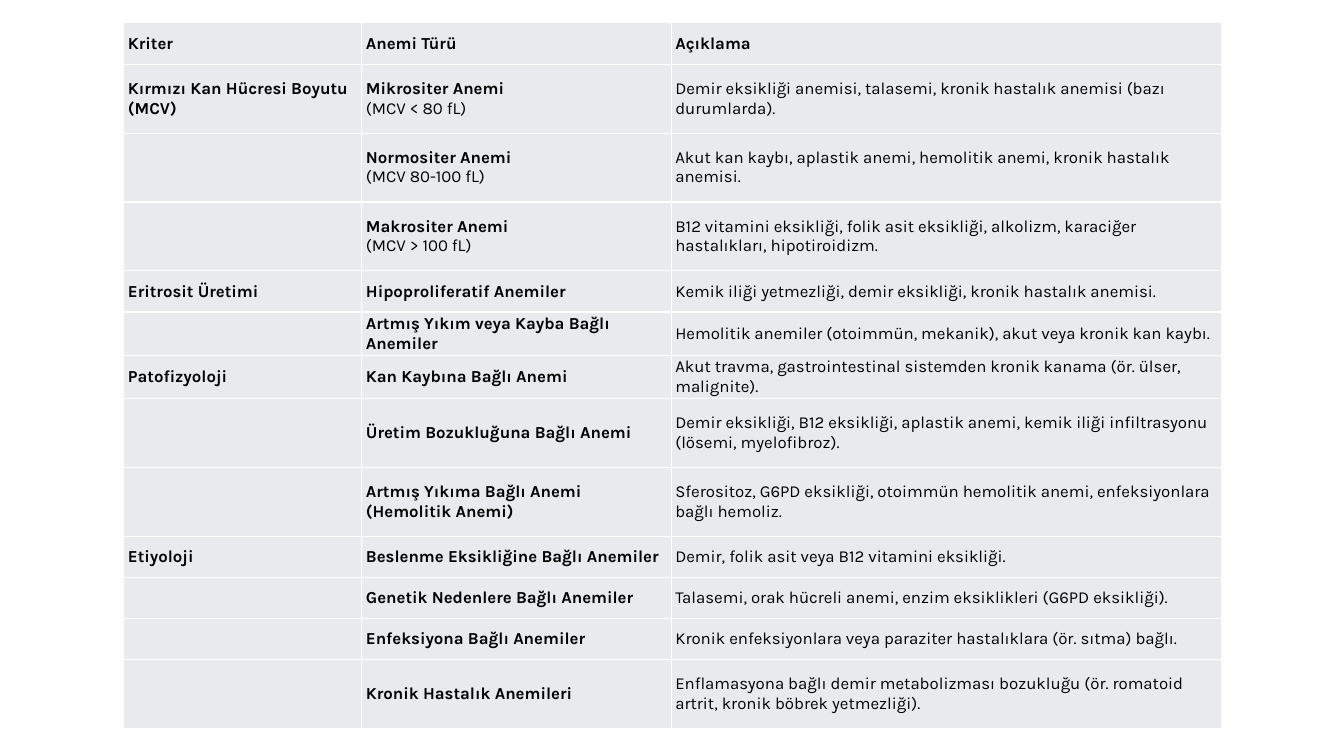
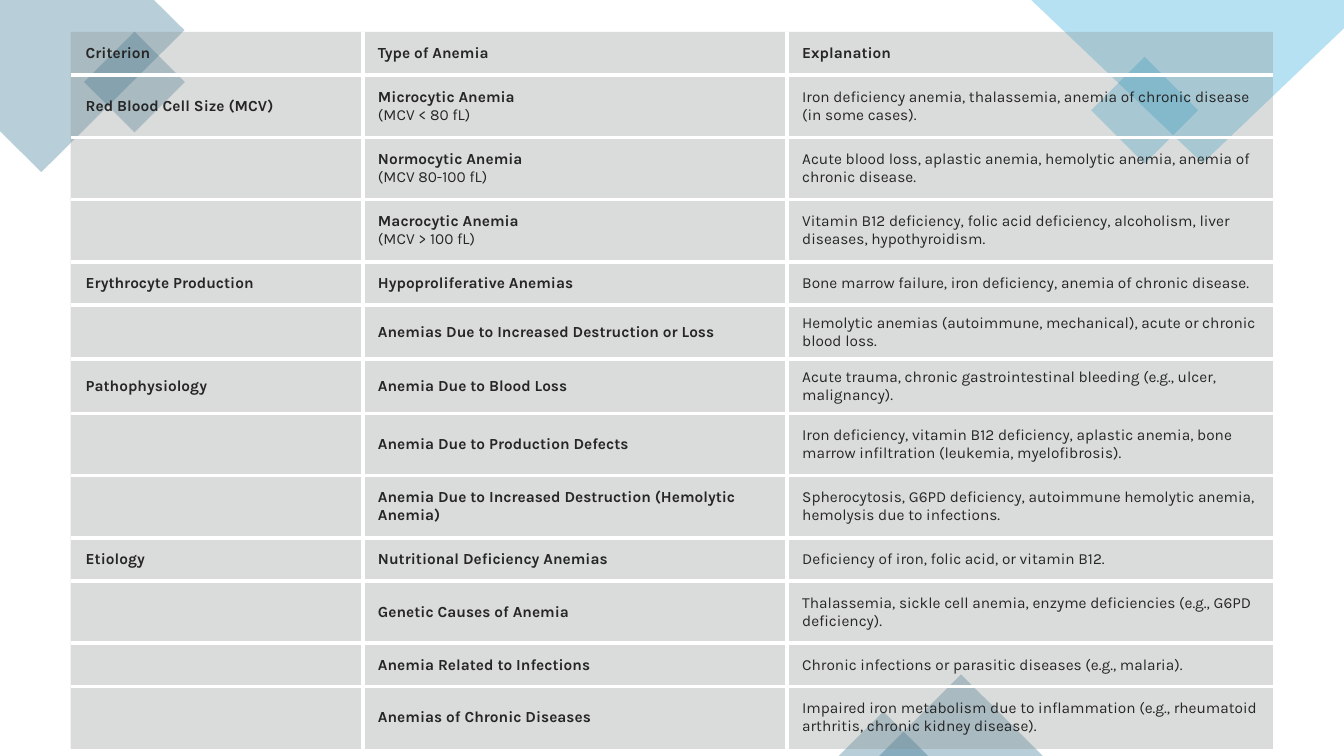
from dataclasses import dataclass

from lxml.etree import SubElement
from pptx import Presentation
from pptx.dml.color import RGBColor
from pptx.enum.shapes import MSO_SHAPE
from pptx.enum.text import MSO_ANCHOR
from pptx.oxml import parse_xml
from pptx.oxml.ns import nsdecls, qn
from pptx.util import Pt


@dataclass(frozen=True)
class Theme:
    font: str = "Karla"
    white: str = "FFFFFF"
    black: str = "000000"
    charcoal: str = "262626"
    pale_grey: str = "E8EAED"
    grey: str = "878E8B"
    teal: str = "156082"
    sky: str = "0F9ED5"
    turkish_size: float = 12
    english_size: float = 11
    glass: int = 30


@dataclass(frozen=True)
class TableStyle:
    """Look of one table; lengths in points, margins as left, right, vertical."""
    position: tuple
    columns: tuple
    short_row: float
    tall_row: float
    tall_rows: tuple
    margins: tuple
    size: float
    ink: str
    fill: str
    opacity: int
    gap: float


THEME = Theme()
NO_STYLE_NO_GRID = "{2D5ABB26-0587-4C30-8999-92F81FD0307C}"


def paint(fill, element, color, opacity):
    """Fill solidly; element is the XML parent that holds the fill."""
    fill.solid()
    fill.fore_color.rgb = RGBColor.from_string(color)
    color_node = next(element.iter(qn("a:srgbClr")))
    SubElement(color_node, qn("a:alpha"), val=str(opacity * 1000))


def add_anemia_table(page, rows, style):
    heights = [style.tall_row if index in style.tall_rows else style.short_row
               for index in range(len(rows))]
    left, top = style.position
    table = page.shapes.add_table(
        len(rows), len(style.columns), Pt(left), Pt(top),
        Pt(sum(style.columns)), Pt(sum(heights))).table
    table.first_row = table.horz_banding = False
    table._tbl.tblPr.find(qn("a:tableStyleId")).text = NO_STYLE_NO_GRID
    for column, width in zip(table.columns, style.columns):
        column.width = Pt(width)
    for row, height in zip(table.rows, heights):
        row.height = Pt(height)

    last_row, last_column = len(rows) - 1, len(style.columns) - 1
    margin_left, margin_right, margin_vertical = style.margins
    for row_index, texts in enumerate(rows):
        for column_index, text in enumerate(texts):
            cell = table.cell(row_index, column_index)
            cell.vertical_anchor = MSO_ANCHOR.MIDDLE
            cell.margin_left, cell.margin_right = Pt(margin_left), Pt(margin_right)
            cell.margin_top = cell.margin_bottom = Pt(margin_vertical if text else 0)
            properties = cell._tc.get_or_add_tcPr()
            paint(cell.fill, properties, style.fill, style.opacity)

            # Only inner edges are ruled
            edges = (("lnL", column_index > 0), ("lnR", column_index < last_column),
                     ("lnT", row_index > 0), ("lnB", row_index < last_row))
            inner_edges = [name for name, is_inner in edges if is_inner]
            for position, name in enumerate(inner_edges):
                properties.insert(position, parse_xml(
                    f'<a:{name} {nsdecls("a")} w="{Pt(style.gap)}"><a:solidFill>'
                    f'<a:srgbClr val="{THEME.white}"/></a:solidFill></a:{name}>'))

            if not text:
                continue
            cell.text_frame.text = text
            for span_index, span in enumerate(cell.text_frame.paragraphs[0].runs):
                font = span.font
                font.name, font.size = THEME.font, Pt(style.size)
                font.color.rgb = RGBColor.from_string(style.ink)
                font.bold = row_index == 0 or (column_index < 2 and span_index == 0)


deck = Presentation()
deck.slide_width, deck.slide_height = Pt(960), Pt(540)
blank = deck.slide_layouts[6]

# Turkish classification
turkish_rows = [
    ("Kriter", "Anemi Türü", "Açıklama"),
    ("Kırmızı Kan Hücresi Boyutu (MCV)", "Mikrositer Anemi\v(MCV < 80 fL)",
     "Demir eksikliği anemisi, talasemi, kronik hastalık anemisi (bazı durumlarda)."),
    ("", "Normositer Anemi\v(MCV 80-100 fL)",
     "Akut kan kaybı, aplastik anemi, hemolitik anemi, kronik hastalık anemisi."),
    ("", "Makrositer Anemi\v(MCV > 100 fL)",
     "B12 vitamini eksikliği, folik asit eksikliği, alkolizm, karaciğer hastalıkları, "
     "hipotiroidizm."),
    ("Eritrosit Üretimi", "Hipoproliferatif Anemiler",
     "Kemik iliği yetmezliği, demir eksikliği, kronik hastalık anemisi."),
    ("", "Artmış Yıkım veya Kayba Bağlı Anemiler",
     "Hemolitik anemiler (otoimmün, mekanik), akut veya kronik kan kaybı."),
    ("Patofizyoloji", "Kan Kaybına Bağlı Anemi",
     "Akut travma, gastrointestinal sistemden kronik kanama (ör. ülser, malignite)."),
    ("", "Üretim Bozukluğuna Bağlı Anemi",
     "Demir eksikliği, B12 eksikliği, aplastik anemi, kemik iliği infiltrasyonu "
     "(lösemi, myelofibroz)."),
    ("", "Artmış Yıkıma Bağlı Anemi (Hemolitik Anemi)",
     "Sferositoz, G6PD eksikliği, otoimmün hemolitik anemi, enfeksiyonlara bağlı hemoliz."),
    ("Etiyoloji", "Beslenme Eksikliğine Bağlı Anemiler",
     "Demir, folik asit veya B12 vitamini eksikliği."),
    ("", "Genetik Nedenlere Bağlı Anemiler",
     "Talasemi, orak hücreli anemi, enzim eksiklikleri (G6PD eksikliği)."),
    ("", "Enfeksiyona Bağlı Anemiler",
     "Kronik enfeksiyonlara veya paraziter hastalıklara (ör. sıtma) bağlı."),
    ("", "Kronik Hastalık Anemileri",
     "Enflamasyona bağlı demir metabolizması bozukluğu (ör. romatoid artrit, "
     "kronik böbrek yetmezliği)."),
]
turkish_page = deck.slides.add_slide(blank)
add_anemia_table(turkish_page, turkish_rows, TableStyle(
    position=(88.5, 16.5), columns=(170, 221, 393), short_row=29.4, tall_row=49.2,
    tall_rows=(1, 2, 3, 7, 8, 12), margins=(2.9, 2.9, 1.4), size=THEME.turkish_size,
    ink=THEME.black, fill=THEME.pale_grey, opacity=100, gap=1))

# English classification, over translucent corner shapes
english_rows = [
    ("Criterion", "Type of Anemia", "Explanation"),
    ("Red Blood Cell Size (MCV)", "Microcytic Anemia\v(MCV < 80 fL)",
     "Iron deficiency anemia, thalassemia, anemia of chronic disease (in some cases)."),
    ("", "Normocytic Anemia\v(MCV 80-100 fL)",
     "Acute blood loss, aplastic anemia, hemolytic anemia, anemia of chronic disease."),
    ("", "Macrocytic Anemia\v(MCV > 100 fL)",
     "Vitamin B12 deficiency, folic acid deficiency, alcoholism, liver diseases, "
     "hypothyroidism."),
    ("Erythrocyte Production", "Hypoproliferative Anemias",
     "Bone marrow failure, iron deficiency, anemia of chronic disease."),
    ("", "Anemias Due to Increased Destruction or Loss",
     "Hemolytic anemias (autoimmune, mechanical), acute or chronic blood loss."),
    ("Pathophysiology", "Anemia Due to Blood Loss",
     "Acute trauma, chronic gastrointestinal bleeding (e.g., ulcer, malignancy)."),
    ("", "Anemia Due to Production Defects",
     "Iron deficiency, vitamin B12 deficiency, aplastic anemia, bone marrow infiltration "
     "(leukemia, myelofibrosis)."),
    ("", "Anemia Due to Increased Destruction (Hemolytic Anemia)",
     "Spherocytosis, G6PD deficiency, autoimmune hemolytic anemia, hemolysis due to "
     "infections."),
    ("Etiology", "Nutritional Deficiency Anemias",
     "Deficiency of iron, folic acid, or vitamin B12."),
    ("", "Genetic Causes of Anemia",
     "Thalassemia, sickle cell anemia, enzyme deficiencies (e.g., G6PD deficiency)."),
    ("", "Anemia Related to Infections",
     "Chronic infections or parasitic diseases (e.g., malaria)."),
    ("", "Anemias of Chronic Diseases",
     "Impaired iron metabolism due to inflammation (e.g., rheumatoid arthritis, "
     "chronic kidney disease)."),
]
english_page = deck.slides.add_slide(blank)
decorations = []
corners = [
    (THEME.teal, [(0, 0), (110, 0), (131.8, 21.6), (29.5, 123), (0, 93.6)]),
    (THEME.sky, [(736.6, 0), (960, 0), (960, 20.2), (859, 116.6)]),
]
for color, corner_points in corners:
    points = [(Pt(x), Pt(y)) for x, y in corner_points]
    builder = english_page.shapes.build_freeform(*points[0])
    builder.add_line_segments(points[1:], close=True)
    decorations.append((builder.convert_to_shape(), color))

accents = [
    (MSO_SHAPE.RECTANGLE, 70.6, 33.1, 51, 51, 45, THEME.teal),
    (MSO_SHAPE.RECTANGLE, 790.6, 51.8, 54, 54, 45, THEME.sky),
    (MSO_SHAPE.ISOSCELES_TRIANGLE, 628, 481.7, 117, 58.3, 0, THEME.teal),
    (MSO_SHAPE.ISOSCELES_TRIANGLE, 599, 508.3, 64, 31.7, 0, THEME.teal),
]
for kind, left, top, width, height, rotation, color in accents:
    accent = english_page.shapes.add_shape(kind, Pt(left), Pt(top), Pt(width), Pt(height))
    accent.rotation = rotation
    decorations.append((accent, color))

for decoration, color in decorations:
    decoration.shadow.inherit = False
    decoration.line.fill.background()
    paint(decoration.fill, decoration._element.spPr, color, THEME.glass)

add_anemia_table(english_page, english_rows, TableStyle(
    position=(50.4, 22.8), columns=(208.8, 303, 347), short_row=31, tall_row=44.4,
    tall_rows=(1, 2, 3, 7, 8, 10, 12), margins=(10.8, 6.5, 6.5), size=THEME.english_size,
    ink=THEME.charcoal, fill=THEME.grey, opacity=THEME.glass, gap=3))

deck.save("out.pptx")
